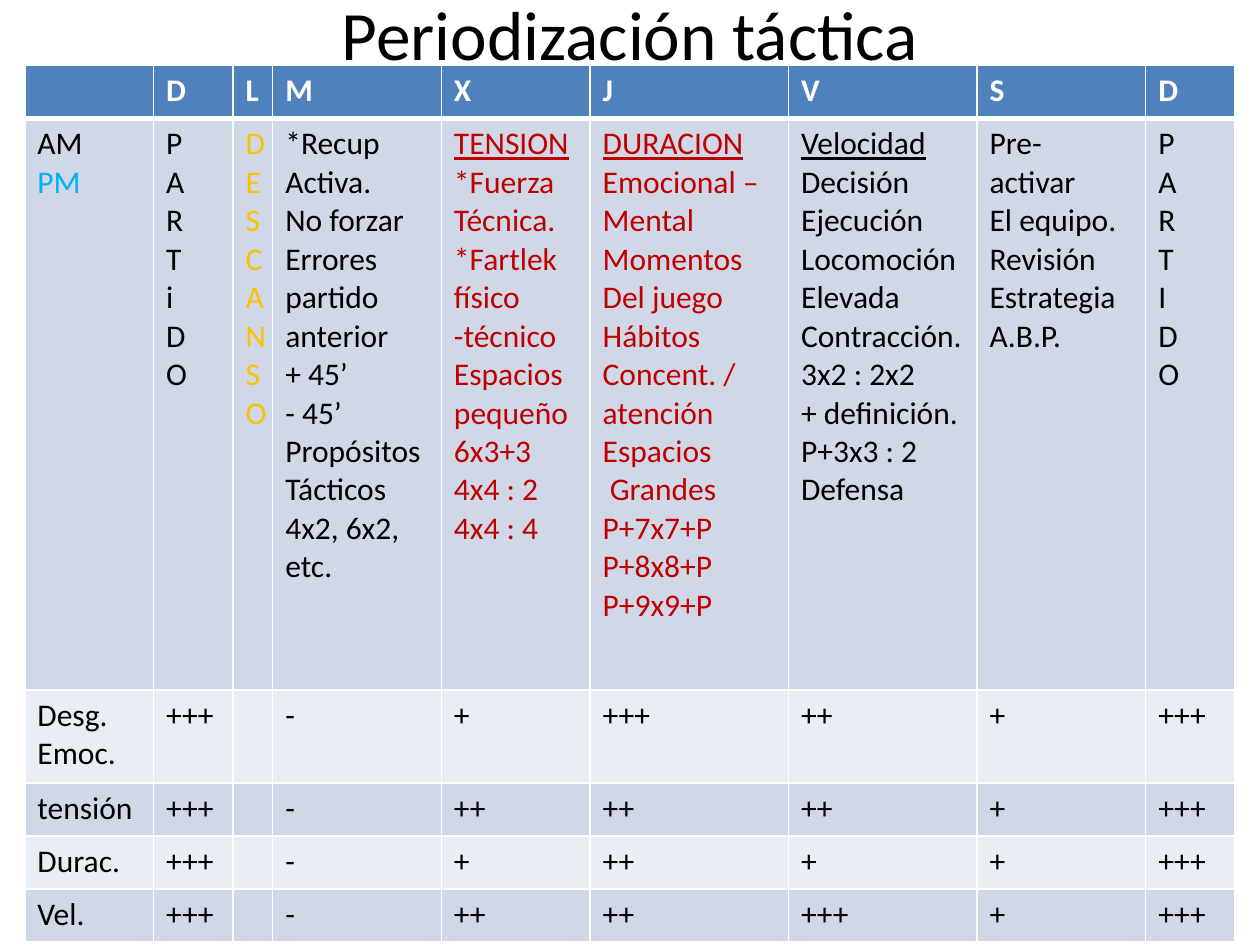
from pptx import Presentation
from pptx.dml.color import RGBColor
from pptx.enum.text import MSO_ANCHOR, MSO_AUTO_SIZE, PP_ALIGN
from pptx.oxml import parse_xml
from pptx.oxml.ns import nsdecls
from pptx.util import Pt

FONT = "Calibri"
BLACK = RGBColor(0x00, 0x00, 0x00)
WHITE = RGBColor(0xFF, 0xFF, 0xFF)
HEADER_BLUE = RGBColor(0x4F, 0x81, 0xBD)
BAND_DARK = RGBColor(0xD0, 0xD8, 0xE8)
BAND_LIGHT = RGBColor(0xE9, 0xED, 0xF4)
RED = RGBColor(0xC0, 0x00, 0x00)
GOLD = RGBColor(0xFF, 0xC0, 0x00)
SKY = RGBColor(0x00, 0xB0, 0xF0)

COL_WIDTHS = [73.6, 45.4, 22.7, 96.4, 85, 113.4, 107.7, 96.4, 51]
ROW_HEIGHTS = [30.3, 326.4, 53.2, 30.3, 30.3, 30.3]

SESSIONS = [
    "AM\nPM",
    "\n".join("PARTiDO"),
    "\n".join("DESCANSO"),
    "*Recup\nActiva.\nNo forzar\nErrores partido anterior\n+ 45’\n- 45’\n"
    "Propósitos\nTácticos\n4x2, 6x2,\netc.",
    "TENSION\n*Fuerza\nTécnica.\n*Fartlek físico -técnico\nEspacios\npequeño\n"
    "6x3+3\n4x4 : 2\n4x4 : 4",
    "DURACION\nEmocional –Mental\nMomentos\nDel juego\nHábitos\n"
    "Concent. / atención\nEspacios\n Grandes\nP+7x7+P\nP+8x8+P\nP+9x9+P",
    "Velocidad\nDecisión\nEjecución\nLocomoción\nElevada Contracción.\n"
    "3x2 : 2x2\n+ definición.\nP+3x3 : 2\nDefensa",
    "Pre-\nactivar\nEl equipo.\nRevisión\nEstrategia\nA.B.P.",
    "\n".join("PARTIDO"),
]
ROWS = [
    ["", *"DLMXJVSD"],
    SESSIONS,
    ["Desg.\nEmoc.", "+++", "", "-", "+", "+++", "++", "+", "+++"],
    ["tensión", "+++", "", "-", "++", "++", "++", "+", "+++"],
    ["Durac.", "+++", "", "-", "+", "++", "+", "+", "+++"],
    ["Vel.", "+++", "", "-", "++", "++", "+++", "+", "+++"],
]
SESSION_COLORS = {2: GOLD, 4: RED, 5: RED}
UNDERLINED = ("TENSION", "DURACION", "Velocidad")


def add_border(cell, side, width):
    cell._tc.get_or_add_tcPr().append(parse_xml(
        f'<a:ln{side} {nsdecls("a")} w="{Pt(width)}"><a:solidFill>'
        f'<a:srgbClr val="{WHITE}"/></a:solidFill></a:ln{side}>'))


def format_font(font, color, **values):
    font.color.rgb = color
    for name, value in values.items():
        setattr(font, name, value)


prs = Presentation()
prs.slide_width, prs.slide_height = Pt(720), Pt(540)
s = prs.slides.add_slide(prs.slide_layouts[5])

title = s.shapes.title
title.left, title.top, title.width, title.height = Pt(36), Pt(0), Pt(648), Pt(37.5)
tf = title.text_frame
tf.text = "Periodización táctica"
tf.auto_size = MSO_AUTO_SIZE.NONE
tf.vertical_anchor = MSO_ANCHOR.MIDDLE
p = tf.paragraphs[0]
p.alignment = PP_ALIGN.CENTER
format_font(p.runs[0].font, BLACK, name=FONT, size=Pt(39.6))

frame = s.shapes.add_table(len(ROWS), len(COL_WIDTHS), Pt(14.2), Pt(37.5),
                           Pt(sum(COL_WIDTHS)), Pt(sum(ROW_HEIGHTS)))
table = frame.table
for column, width in zip(table.columns, COL_WIDTHS):
    column.width = Pt(width)
for row, height in zip(table.rows, ROW_HEIGHTS):
    row.height = Pt(height)

for i, texts in enumerate(ROWS):
    for j, text in enumerate(texts):
        cell = table.cell(i, j)
        for side in "LRTB":
            thick = (i, side) in ((0, "B"), (1, "T"))
            add_border(cell, side, 3 if thick else 1)
        cell.fill.solid()
        cell.fill.fore_color.rgb = (
            HEADER_BLUE if i == 0 else BAND_DARK if i % 2 else BAND_LIGHT)
        cell.text = text
        color = WHITE if i == 0 else BLACK
        if i == 1:
            color = SESSION_COLORS.get(j, BLACK)
        for p in cell.text_frame.paragraphs:
            for r in p.runs:
                format_font(r.font, SKY if r.text == "PM" else color, name=FONT,
                            size=Pt(18), bold=i == 0, underline=r.text in UNDERLINED)

prs.save("out.pptx")
